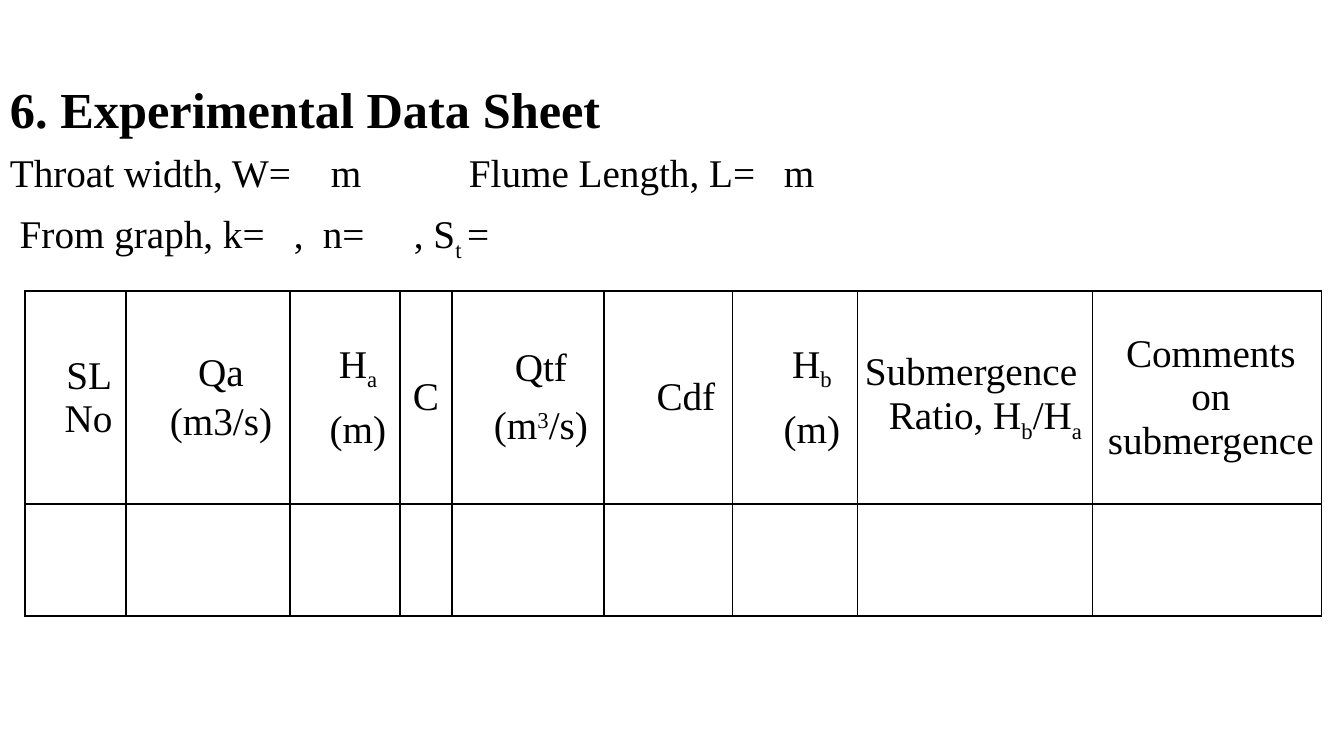
from lxml import etree
from pptx import Presentation
from pptx.dml.color import RGBColor
from pptx.enum import text
from pptx.oxml import ns
from pptx.util import Emu, Pt

BLACK = RGBColor(0, 0, 0)
FONT = "Times New Roman"
PX = 914400 / 100.8
SUB, SUPER = -25000, 30000

# Content: a run is plain text or (text, baseline shift)
# Intro lines: runs, size in pt, bold, tab stops in px
INTRO = [
    (["6. Experimental Data Sheet"], 36, True, []),
    (["Throat width, W=\tm\tFlume Length, L=\tm"], 28, False, [321, 459, 774]),
    ([" From graph, k=\t,\tn=\t, S", ("t ", SUB), "="], 28, False, [284, 313, 404]),
]

# Columns: width px, left indent px, first-line indent px, line spacing,
# then paragraphs of (space before in pt, runs)
COLUMNS = [
    (101, 26, 0, 1, [(4.3, ["SL No"])]),
    (164, 26, 0, 1, [(4.4, ["Qa"]), (4.4, ["(m3/s)"])]),
    (110, 26, 0, 1, [(4.3, ["H", ("a", SUB)]), (11.2, ["(m)"])]),
    (52, 0, 0, 1, [(32.4, ["C"])]),
    (152, 26, 0, 1, [(4.4, ["Qtf"]), (10.4, ["(m", ("3", SUPER), "/s)"])]),
    (129, 35, 0, 1, [(32.4, ["Cdf"])]),
    (125, 33, 0, 1, [(4.3, ["H", ("b", SUB)]), (11.2, ["(m)"])]),
    (235, 31, -24, 1.01,
     [(3.4, ["Submergence Ratio, H", ("b", SUB), "/H", ("a", SUB)])]),
    (229, 7, 0, 1.01, [(3.4, ["Comments\von\vsubmergence"])]),
]
ROW_HEIGHTS = [213, 112]
TABLE_LEFT, TABLE_TOP = 25, 291


def px(length):
    return Emu(round(length * PX))


def write_runs(paragraph, runs, size, bold=False):
    for item in runs:
        words, shift = (item, 0) if isinstance(item, str) else item
        for index, line in enumerate(words.split("\v")):
            if index:
                paragraph.add_line_break()
            run = paragraph.add_run()
            run.text = line
            run.font.name = FONT
            run.font.size = Pt(size)
            run.font.bold = bold
            run.font.color.rgb = BLACK
            if shift:
                run._r.get_or_add_rPr().set("baseline", str(shift))


def next_paragraph(frame, index):
    return frame.add_paragraph() if index else frame.paragraphs[0]


def set_tabs(paragraph, stops):
    tab_list = etree.SubElement(paragraph._p.get_or_add_pPr(), ns.qn("a:tabLst"))
    for stop in stops:
        etree.SubElement(tab_list, ns.qn("a:tab"), pos=str(px(stop)), algn="l")


def set_borders(cell):
    properties = cell._tc.get_or_add_tcPr()
    for position, side in enumerate(("a:lnL", "a:lnR", "a:lnT", "a:lnB")):
        line = etree.Element(ns.qn(side), w=str(Pt(1)))
        fill = etree.SubElement(line, ns.qn("a:solidFill"))
        etree.SubElement(fill, ns.qn("a:srgbClr"), val=str(BLACK))
        properties.insert(position, line)


def add_intro(slide):
    box = slide.shapes.add_textbox(0, px(85), px(1344), px(180))
    frame = box.text_frame
    frame.word_wrap = True
    frame.margin_top = frame.margin_bottom = 0
    for index, (runs, size, bold, stops) in enumerate(INTRO):
        paragraph = next_paragraph(frame, index)
        paragraph.line_spacing = 0.9
        paragraph.space_before = Pt(10 if index else 0)
        if stops:
            set_tabs(paragraph, stops)
        write_runs(paragraph, runs, size, bold)


def fill_header(cell, indent, first_line, spacing, paragraphs):
    cell.vertical_anchor = text.MSO_ANCHOR.MIDDLE
    cell.margin_left = cell.margin_right = 0
    cell.margin_top = cell.margin_bottom = 0
    for index, (before, runs) in enumerate(paragraphs):
        paragraph = next_paragraph(cell.text_frame, index)
        hanging = first_line < 0
        paragraph.alignment = text.PP_ALIGN.LEFT if hanging else text.PP_ALIGN.CENTER
        paragraph.line_spacing = float(spacing)
        paragraph.space_before = Pt(before)
        properties = paragraph._p.get_or_add_pPr()
        properties.set("marL", str(px(indent)))
        properties.set("indent", str(px(first_line)))
        write_runs(paragraph, runs, 28)


def add_data_table(slide):
    width = sum(column[0] for column in COLUMNS)
    frame = slide.shapes.add_table(
        len(ROW_HEIGHTS), len(COLUMNS), px(TABLE_LEFT), px(TABLE_TOP),
        px(width), px(sum(ROW_HEIGHTS)))
    table = frame.table
    table.first_row = table.horz_banding = False
    for row, height in zip(table.rows, ROW_HEIGHTS):
        row.height = px(height)
    for index, (column_width, *header) in enumerate(COLUMNS):
        table.columns[index].width = px(column_width)
        fill_header(table.cell(0, index), *header)
    for cell in table.iter_cells():
        cell.fill.background()
        set_borders(cell)


def main():
    presentation = Presentation()
    presentation.slide_width = px(1344)
    presentation.slide_height = px(756)
    slide = presentation.slides.add_slide(presentation.slide_layouts[6])
    add_intro(slide)
    add_data_table(slide)
    presentation.save("out.pptx")


if __name__ == "__main__":
    main()
